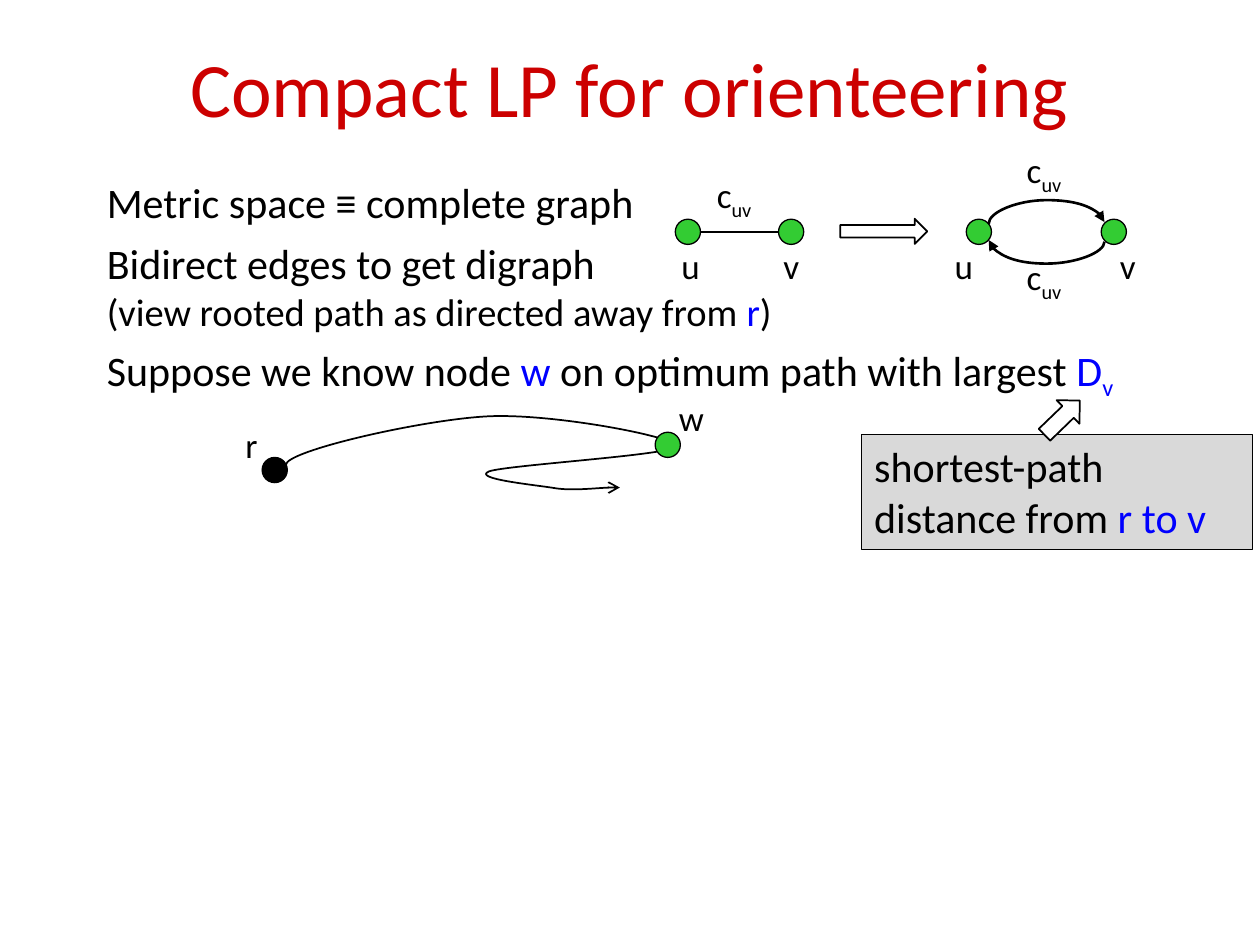
from lxml import etree
from pptx import Presentation
from pptx.dml.color import RGBColor
from pptx.enum.shapes import MSO_CONNECTOR, MSO_SHAPE
from pptx.enum.text import MSO_ANCHOR, MSO_AUTO_SIZE, PP_ALIGN
from pptx.oxml.ns import qn
from pptx.util import Pt

RED = RGBColor(0xCC, 0x00, 0x00)
BLUE = RGBColor(0x00, 0x00, 0xFF)
GREEN = RGBColor(0x33, 0xCC, 0x33)
BLACK = RGBColor(0x00, 0x00, 0x00)
GRAY = RGBColor(0xD9, 0xD9, 0xD9)
WHITE = RGBColor(0xFF, 0xFF, 0xFF)

OVAL, RECT = MSO_SHAPE.OVAL, MSO_SHAPE.RECTANGLE
RIGHT, DOWN = MSO_SHAPE.RIGHT_ARROW, MSO_SHAPE.DOWN_ARROW
LINE, CURVE = MSO_CONNECTOR.STRAIGHT, MSO_CONNECTOR.CURVE
TOP, MIDDLE = MSO_ANCHOR.TOP, MSO_ANCHOR.MIDDLE
LEFT, CENTER = PP_ALIGN.LEFT, PP_ALIGN.CENTER
GROW = MSO_AUTO_SIZE.SHAPE_TO_FIT_TEXT

FONT = "Calibri"
NODE = 14.4


def add_run(para, text, size, color=BLACK, sub=False):
    run = para.add_run()
    run.text = text
    run.font.name = FONT
    run.font.size = Pt(size)
    run.font.color.rgb = color
    if sub:
        run._r.get_or_add_rPr().set("baseline", "-25000")


def fill_text(frame, paras):
    frame.word_wrap = True
    frame.auto_size = GROW
    frame.vertical_anchor = TOP
    for i, (gap, runs) in enumerate(paras):
        para = frame.add_paragraph() if i else frame.paragraphs[0]
        para.alignment = LEFT
        para.space_before = Pt(gap)
        for args in runs:
            add_run(para, *args)


def add_text(shapes, x, y, w, h, paras):
    box = shapes.add_textbox(Pt(x), Pt(y), Pt(w), Pt(h))
    fill_text(box.text_frame, paras)


def add_label(shapes, x, y, text, sub=None):
    runs = [(text, 20)]
    if sub:
        runs.append((sub, 20, BLACK, True))
    add_text(shapes, x, y, 37.5 if sub else 30, 31.5, [(0, runs)])


def add_form(shapes, kind, x, y, w, h, fill=None, weight=0.75):
    form = shapes.add_shape(kind, Pt(x), Pt(y), Pt(w), Pt(h))
    form.shadow.inherit = False
    if fill is None:
        form.fill.background()
    else:
        form.fill.solid()
        form.fill.fore_color.rgb = fill
    form.line.color.rgb = BLACK
    form.line.width = Pt(weight)
    return form


def add_node(shapes, x, y, fill=GREEN):
    add_form(shapes, OVAL, x, y, NODE, NODE, fill)


def add_head(shape, end, kind):
    line = shape._element.spPr.find(qn("a:ln"))
    etree.SubElement(line, qn(f"a:{end}"), type=kind)


def add_edge(shapes, kind, x1, y1, x2, y2):
    edge = shapes.add_connector(kind, Pt(x1), Pt(y1), Pt(x2), Pt(y2))
    edge.line.color.rgb = BLACK
    edge.line.width = Pt(1.5)
    etree.SubElement(edge._element.spPr, qn("a:effectLst"))
    return edge


def add_arc(shapes, x1, y1, x2, y2, turn, end):
    arc = add_edge(shapes, CURVE, x1, y1, x2, y2)
    props = arc._element.spPr
    props.find(qn("a:xfrm")).set("rot", str(turn * 60000))
    guides = props.find(qn("a:prstGeom")).find(qn("a:avLst"))
    etree.SubElement(guides, qn("a:gd"), name="adj1", fmla="val 1364400")
    add_head(arc, end, "triangle")


def add_curve(shapes, points):
    start, *rest = [(Pt(x), Pt(y)) for x, y in points]
    maker = shapes.build_freeform(*start)
    maker.add_line_segments(rest, close=False)
    curve = maker.convert_to_shape()
    curve.shadow.inherit = False
    curve.fill.background()
    curve.line.color.rgb = BLACK
    curve.line.width = Pt(1)
    add_head(curve, "tailEnd", "arrow")
    steps = list(curve._element.iter(qn("a:lnTo")))
    for i in range(0, len(steps), 3):
        bend = etree.Element(qn("a:cubicBezTo"))
        steps[i].addprevious(bend)
        for step in steps[i:i + 3]:
            bend.append(step[0])
            step.getparent().remove(step)


def place_title(slide, x, y, w, h):
    title = slide.shapes.title
    title.left, title.top, title.width, title.height = Pt(x), Pt(y), Pt(w), Pt(h)
    title.text_frame.vertical_anchor = MIDDLE
    para = title.text_frame.paragraphs[0]
    para.alignment = CENTER
    add_run(para, "Compact LP for orienteering", 44, RED)


def place_body(slide, x, y, w, h):
    add_text(slide.shapes, x, y, w, h, [
        (0, [("Metric space ≡ complete graph", 24)]),
        (6, [("Bidirect edges to get digraph", 24)]),
        (0, [("(view rooted path as directed away from ", 22),
             ("r", 22, BLUE), (")", 22)]),
        (6, [("Suppose we know node ", 24), ("w", 24, BLUE),
             (" on optimum path with largest ", 24),
             ("D", 24, BLUE), ("v", 24, BLUE, True)]),
    ])


def place_graph(slide, x, y):
    shapes = slide.shapes.add_group_shape().shapes
    for dx in (3.6, 62.6, 169.9, 247):
        add_node(shapes, x + dx, y + 43.9)
    mid = y + 43.9 + NODE / 2
    add_edge(shapes, LINE, x + 18, mid, x + 62.6, mid)
    add_arc(shapes, x + 216.2, y + 79.1, x + 215.2, y + 12.9, 90, "tailEnd")
    add_arc(shapes, x + 216.2, y + 23.1, x + 215.2, y + 89.3, 270, "headEnd")
    for dx, name in ((0, "u"), (58.3, "v"), (156.2, "u"), (250.6, "v")):
        add_label(shapes, x + dx, y + 54.7, name)
    for dx, dy in ((20.2, 14.4), (197.3, 0), (197.3, 61.2)):
        add_label(shapes, x + dx, y + dy, "c", "uv")
    add_form(shapes, RIGHT, x + 97.9, y + 43.6, 49.7, 14.4, weight=1)


def place_note(slide, x, y, w, h):
    note = add_form(slide.shapes, RECT, x, y, w, h, GRAY)
    fill_text(note.text_frame, [
        (0, [("shortest-path distance from ", 24), ("r to v", 24, BLUE)])])


def place_path(slide, x, y):
    shapes = slide.shapes.add_group_shape().shapes
    add_node(shapes, x + 16.6, y + 38.2, BLACK)
    add_label(shapes, x, y + 15.1, "r")
    bends = [(30.2, 42.5), (29.5, 34.6), (108, 16.6), (145.4, 14.7),
             (182.9, 12.8), (253.4, 26.6), (253.4, 31.7),
             (253.4, 36.7), (156.2, 42.5), (146.2, 46.2),
             (136.1, 50.4), (173.5, 54), (182.9, 55.6),
             (193, 57.4), (216, 54.8), (221, 55.4)]
    add_curve(shapes, [(x + dx, y + dy) for dx, dy in bends])
    add_node(shapes, x + 241.2, y + 23.8)
    add_label(shapes, x + 247.7, y, "w")


def place_arrow(slide, x, y, w, h):
    arrow = add_form(slide.shapes, DOWN, x, y, w, h, WHITE, 1)
    arrow.rotation = 226


def main():
    deck = Presentation()
    deck.slide_width, deck.slide_height = Pt(720), Pt(540)
    slide = deck.slides.add_slide(deck.slide_layouts[5])
    place_title(slide, 54, 16.6, 612, 66.2)
    place_body(slide, 54, 97.2, 612, 133.2)
    place_graph(slide, 382.3, 81.4)
    place_note(slide, 492.5, 248.4, 223.2, 65.5)
    place_path(slide, 133.2, 223.2)
    place_arrow(slide, 597.6, 224.6, 18.7, 28.1)
    deck.save("out.pptx")


if __name__ == "__main__":
    main()
